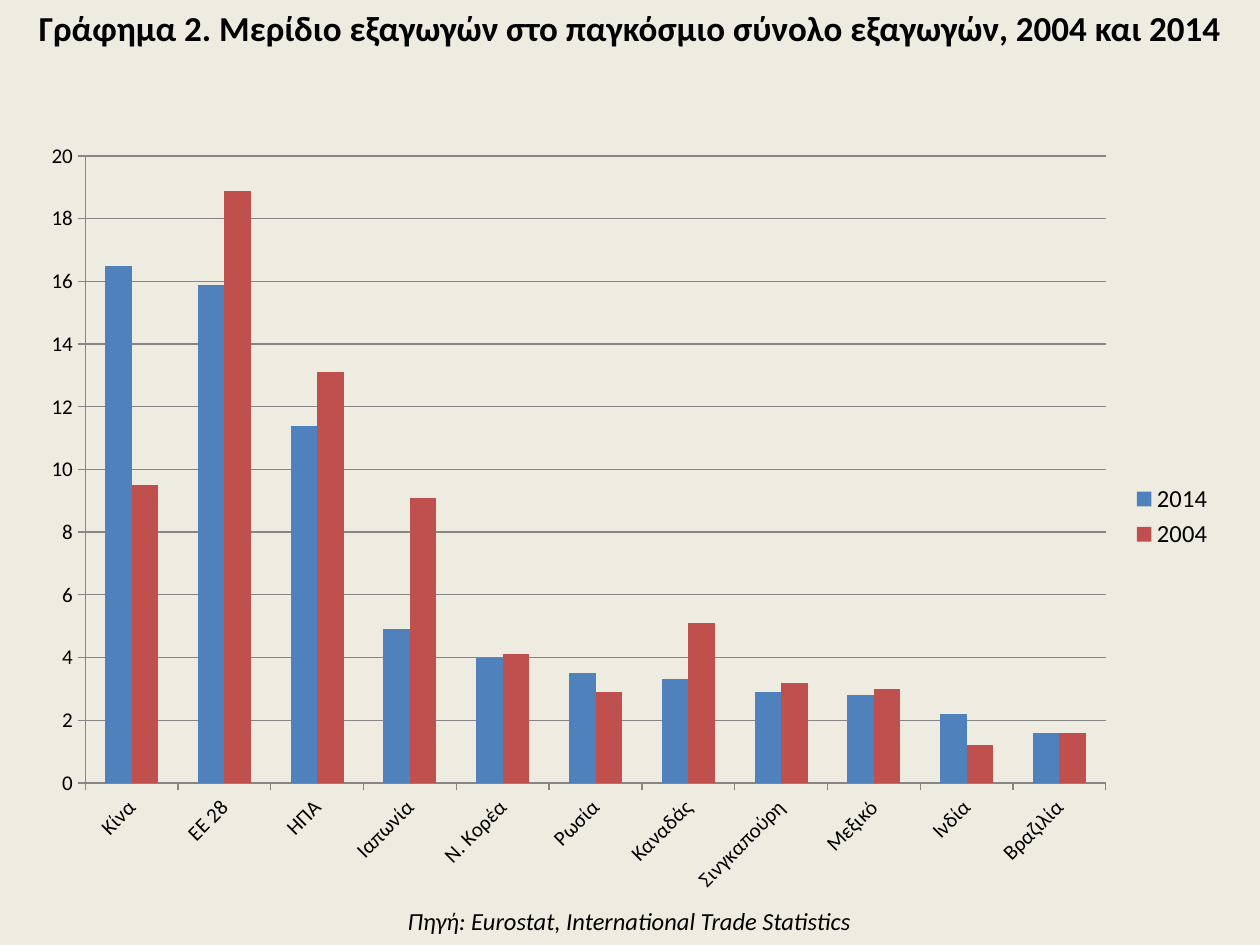
from lxml import etree
from pptx import Presentation
from pptx.chart.data import CategoryChartData
from pptx.dml.color import RGBColor
from pptx.enum.chart import XL_CHART_TYPE, XL_LEGEND_POSITION, XL_TICK_MARK
from pptx.enum.text import MSO_ANCHOR, PP_ALIGN
from pptx.oxml.ns import qn
from pptx.util import Inches, Pt

COLUMNS = XL_CHART_TYPE.COLUMN_CLUSTERED
RIGHT = XL_LEGEND_POSITION.RIGHT
OUTSIDE = XL_TICK_MARK.OUTSIDE
CENTER = PP_ALIGN.CENTER
TOP = MSO_ANCHOR.TOP

# Content
TITLE = "Γράφημα 2. Μερίδιο εξαγωγών στο παγκόσμιο σύνολο εξαγωγών, 2004 και 2014"
SOURCE = "Πηγή: Eurostat, International Trade Statistics"
YEARS = ("2014", "2004")
EXPORT_SHARES = [
    ("Κίνα", 16.5, 9.5),
    ("ΕΕ 28", 15.9, 18.9),
    ("ΗΠΑ", 11.4, 13.1),
    ("Ιαπωνία", 4.9, 9.1),
    ("Ν. Κορέα", 4, 4.1),
    ("Ρωσία", 3.5, 2.9),
    ("Καναδάς", 3.3, 5.1),
    ("Σινγκαπούρη", 2.9, 3.2),
    ("Μεξικό", 2.8, 3),
    ("Ινδία", 2.2, 1.2),
    ("Βραζιλία", 1.6, 1.6),
]

THEME = {
    "font": "Calibri",
    "background": RGBColor(0xEE, 0xEC, 0xE1),
    "text": RGBColor(0, 0, 0),
    "lines": RGBColor(0x86, 0x86, 0x86),
    "series": (RGBColor(0x4F, 0x81, 0xBD), RGBColor(0xC0, 0x50, 0x4D)),
    "title": Pt(20),
    "source": Pt(14),
    "legend": Pt(14),
    "axis": Pt(12),
    "chart": Pt(10),
}
# Plot area as fractions of the chart frame
PLOT = {"x": 0.05, "y": 0.04, "w": 0.85, "h": 0.8}


def style_font(font, size, bold=False, italic=False):
    font.name = THEME["font"]
    font.size = size
    font.bold = bold
    font.italic = italic
    font.color.rgb = THEME["text"]


def write_line(shape, text, size, **style):
    tf = shape.text_frame
    tf.word_wrap = True
    tf.vertical_anchor = TOP
    p = tf.paragraphs[0]
    p.alignment = CENTER
    r = p.add_run()
    r.text = text
    style_font(r.font, size, **style)


def place_plot(chart):
    plot_area = chart.plots[0]._element.getparent()
    for old in plot_area.findall(qn("c:layout")):
        plot_area.remove(old)
    layout = etree.Element(qn("c:layout"))
    manual = etree.SubElement(layout, qn("c:manualLayout"))
    settings = {"layoutTarget": "inner", "xMode": "edge", "yMode": "edge", **PLOT}
    for tag, value in settings.items():
        etree.SubElement(manual, qn(f"c:{tag}")).set("val", str(value))
    plot_area.insert(0, layout)


prs = Presentation()
prs.slide_width, prs.slide_height = Inches(10), Inches(7.5)
s = prs.slides.add_slide(prs.slide_layouts[5])
s.background.fill.solid()
s.background.fill.fore_color.rgb = THEME["background"]

# Title
title = s.shapes.title
title.left, title.top = Inches(0), Inches(0)
title.width, title.height = Inches(10), Inches(0.44)
write_line(title, TITLE, THEME["title"], bold=True)

# Chart
data = CategoryChartData()
countries, *shares = zip(*EXPORT_SHARES)
data.categories = countries
for year, values in zip(YEARS, shares):
    data.add_series(year, values)
chart = s.shapes.add_chart(
    COLUMNS, Inches(0.2), Inches(0.99), Inches(9.53), Inches(6.22), data
).chart
style_font(chart.font, THEME["chart"])
chart.has_title = False
place_plot(chart)

plot = chart.plots[0]
plot.vary_by_categories = False
plot.gap_width = 150
plot.overlap = 0
for series, color in zip(plot.series, THEME["series"]):
    series.format.fill.solid()
    series.format.fill.fore_color.rgb = color

# Axes and gridlines
value_axis, category_axis = chart.value_axis, chart.category_axis
value_axis.minimum_scale, value_axis.maximum_scale = 0, 20
value_axis.major_unit = 2
value_axis.has_major_gridlines = True
for axis in (value_axis, category_axis):
    axis.major_tick_mark = OUTSIDE
    style_font(axis.tick_labels.font, THEME["axis"])
for lined in (value_axis, category_axis, value_axis.major_gridlines):
    lined.format.line.color.rgb = THEME["lines"]
    lined.format.line.width = Pt(0.75)
label_body = category_axis._element.find(f"{qn('c:txPr')}/{qn('a:bodyPr')}")
label_body.set("rot", str(-45 * 60000))
label_body.set("vert", "horz")

# Legend
chart.has_legend = True
chart.legend.position = RIGHT
chart.legend.include_in_layout = False
style_font(chart.legend.font, THEME["legend"])

# Source
source = s.shapes.add_textbox(Inches(1.61), Inches(7.14), Inches(6.77), Inches(0.34))
write_line(source, SOURCE, THEME["source"], italic=True)

prs.save("out.pptx")
